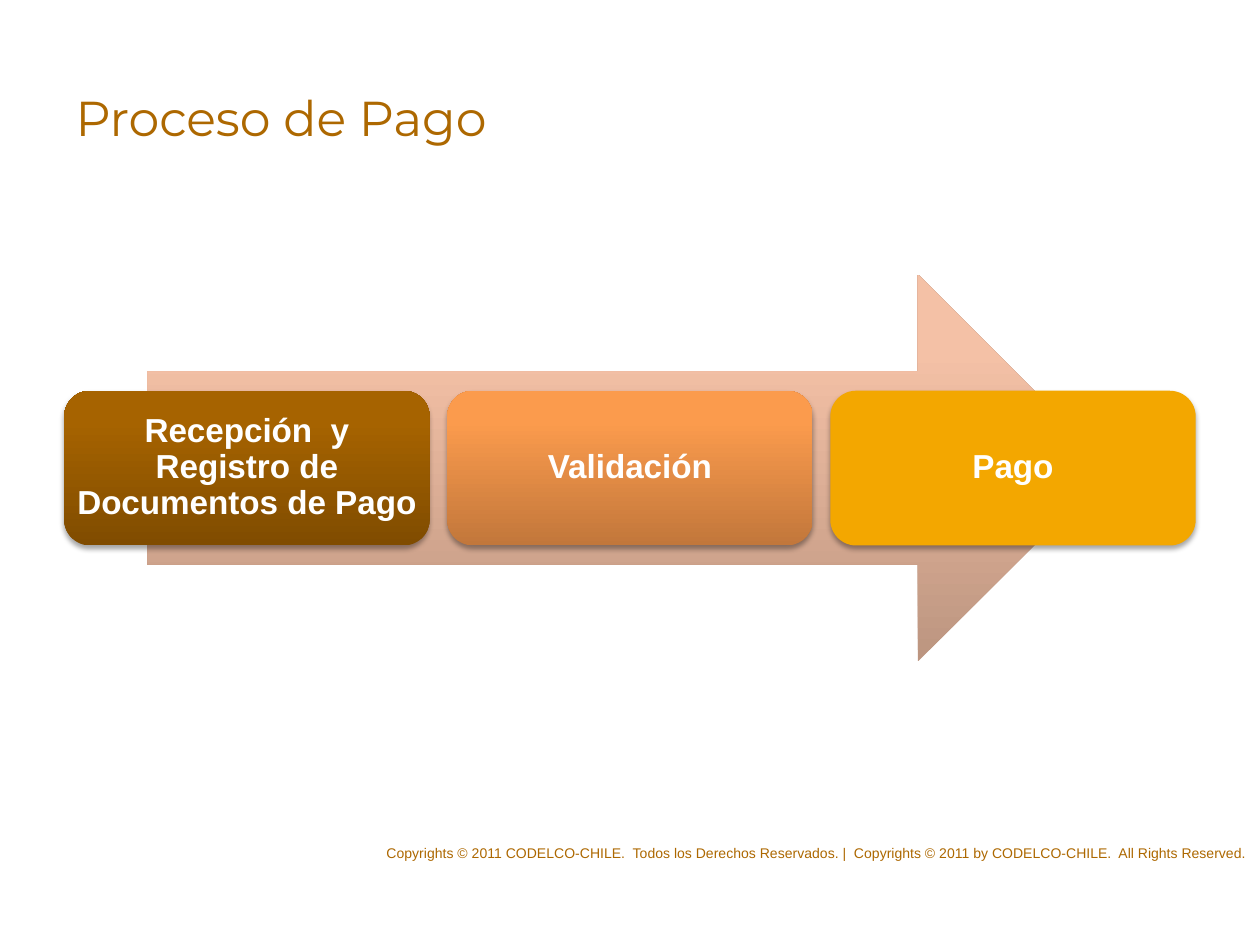
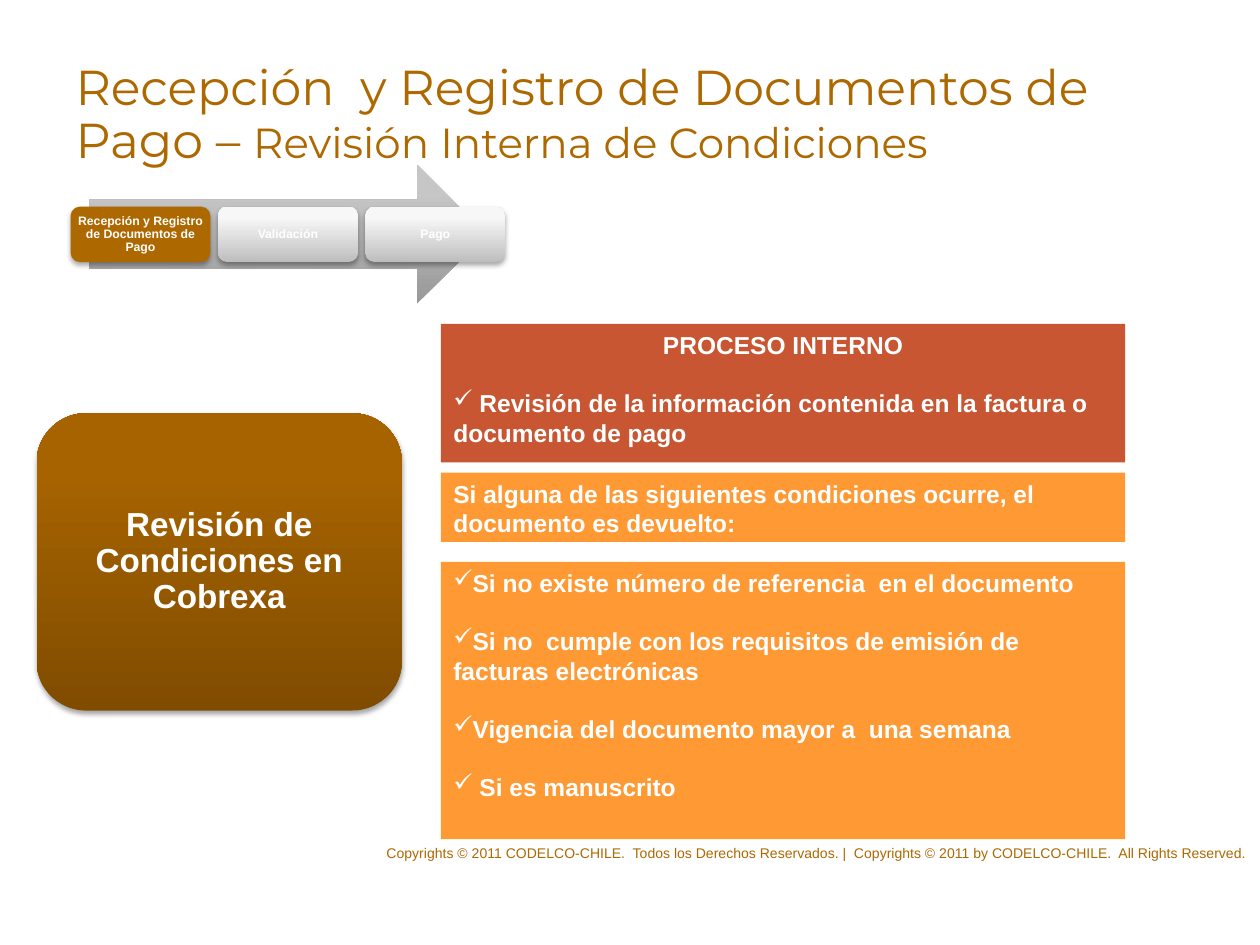
from lxml.etree import SubElement
from pptx import Presentation
from pptx.dml.color import RGBColor
from pptx.enum.shapes import MSO_SHAPE
from pptx.enum.text import MSO_ANCHOR, MSO_AUTO_SIZE, PP_ALIGN
from pptx.oxml.ns import qn
from pptx.util import Inches, Pt

BROWN, WHITE, AMBER, RUST, ORANGE = "AD6800", "FFFFFF", "F3A700", "C85632", "FF9933"
BROWN_FADE = ("804C00", "A66300")
ORANGE_FADE = ("C2773B", "FB9B4D")
PEACH_FADE = ("BC9580", "F4C1A6")
GREY_FADE = ("989898", "C6C6C6")
SILVER_FADE = ("BEBEBE", "F7F7F7")

FOOTER = ("Copyrights © 2011 CODELCO-CHILE.  Todos los Derechos Reservados. |  "
          "Copyrights © 2011 by CODELCO-CHILE.  All Rights Reserved.")

OVERVIEW = {
    "title": [("Proceso de Pago", 28)],
    "title_spacing": 1.0,
    "process": {
        "arrow": (1.17, 2.18, 7.65, 3.07), "arrow_fill": PEACH_FADE,
        "left": 0.51, "width": 2.9, "pitch": 3.04, "size": 19,
        "steps": [
            ("Recepción  y Registro de Documentos de Pago", BROWN_FADE),
            ("Validación", ORANGE_FADE),
            ("Pago", AMBER),
        ],
    },
}
REVIEW = {
    "title": [("Recepción  y Registro de Documentos de Pago – ", 28),
              ("Revisión Interna de Condiciones", 24)],
    "title_spacing": 0.9,
    "process": {
        "arrow": (0.71, 1.31, 3.15, 1.1), "arrow_fill": GREY_FADE,
        "left": 0.56, "width": 1.11, "pitch": 1.17, "size": 7,
        "steps": [
            ("Recepción y Registro de Documentos de Pago", BROWN),
            ("Validación", SILVER_FADE),
            ("Pago", SILVER_FADE),
        ],
    },
}
REVIEW_STAGE = "Revisión de Condiciones en Cobrexa"
HEADING, PLAIN, CHECK = "heading", "plain", "check"
PANELS = [
    (2.57, 1.1, RUST, [
        (HEADING, "PROCESO INTERNO"),
        (CHECK, " Revisión de la información contenida en la factura o documento de pago"),
    ]),
    (3.75, 0.55, ORANGE, [
        (PLAIN, "Si alguna de las siguientes condiciones ocurre, el documento es devuelto:"),
    ]),
    (4.46, 2.2, ORANGE, [
        (CHECK, "Si no existe número de referencia  en el documento"),
        (CHECK, "Si no  cumple con los requisitos de emisión de facturas electrónicas"),
        (CHECK, "Vigencia del documento mayor a  una semana"),
        (CHECK, " Si es manuscrito"),
    ]),
]
PANEL_LEFT, PANEL_WIDTH = 3.5, 5.43


def color(value):
    return RGBColor.from_string(value)


def set_font(font, size, shade, bold=False, name="Arial"):
    font.name, font.size, font.bold = name, Pt(size), bold
    font.color.rgb = color(shade)


def add_block(page, kind, place, fill):
    """Add a borderless shape with a solid fill or a (bottom, top) fade."""
    block = page.shapes.add_shape(kind, *map(Inches, place))
    block.shadow.inherit = False
    block.line.fill.background()
    if isinstance(fill, str):
        block.fill.solid()
        block.fill.fore_color.rgb = color(fill)
    else:
        block.fill.gradient()
        block.fill.gradient_angle = 90
        for stop, shade, position in zip(block.fill.gradient_stops, fill, (0, 0.8)):
            stop.color.rgb = color(shade)
            stop.position = position
    return block


def add_shadow(block):
    effects = block.element.spPr.find(qn("a:effectLst"))
    shadow = SubElement(effects, qn("a:outerShdw"), blurRad=str(Pt(3.1)),
                        dist=str(Pt(1.8)), dir="5400000", rotWithShape="0")
    shade = SubElement(shadow, qn("a:srgbClr"), val="000000")
    SubElement(shade, qn("a:alpha"), val="35000")


def add_stage(page, place, text, fill, size):
    stage = add_block(page, MSO_SHAPE.ROUNDED_RECTANGLE, place, fill)
    add_shadow(stage)
    frame = stage.text_frame
    frame.word_wrap = True
    frame.vertical_anchor = MSO_ANCHOR.MIDDLE
    frame.margin_left = frame.margin_right = Inches(0.02)
    frame.margin_top = frame.margin_bottom = Inches(0.02)
    para = frame.paragraphs[0]
    para.text = text
    para.alignment = PP_ALIGN.CENTER
    para.line_spacing = 0.9
    set_font(para.font, size, WHITE, bold=True)


def add_process(page, process):
    """Draw the arrow and its row of stages, centred on the arrow."""
    arrow = process["arrow"]
    add_block(page, MSO_SHAPE.RIGHT_ARROW, arrow, process["arrow_fill"])
    height = 0.4 * arrow[3]
    top = arrow[1] + (arrow[3] - height) / 2
    for index, (text, fill) in enumerate(process["steps"]):
        left = process["left"] + index * process["pitch"]
        add_stage(page, (left, top, process["width"], height), text, fill, process["size"])


def add_panel(page, top, height, fill, lines):
    panel = add_block(page, MSO_SHAPE.RECTANGLE, (PANEL_LEFT, top, PANEL_WIDTH, height), fill)
    frame = panel.text_frame
    frame.word_wrap = True
    frame.vertical_anchor = MSO_ANCHOR.TOP
    for index, (role, text) in enumerate(lines):
        para = frame.add_paragraph() if index else frame.paragraphs[0]
        para.text = text
        para.alignment = PP_ALIGN.CENTER if role == HEADING else PP_ALIGN.LEFT
        if index:
            para.space_before = Pt(16.5)
        if role == CHECK:
            SubElement(para._p.get_or_add_pPr(), qn("a:buChar"), char="✓")
        set_font(para.font, 14, WHITE, bold=True)


def add_footer(page):
    box = page.shapes.add_textbox(*map(Inches, (2.27, 6.65, 7.73, 0.24)))
    frame = box.text_frame
    frame.word_wrap = True
    frame.vertical_anchor = MSO_ANCHOR.MIDDLE
    para = frame.paragraphs[0]
    para.text = FOOTER
    para.alignment = PP_ALIGN.RIGHT
    set_font(para.font, 8, BROWN)


def add_page(deck, content):
    """Add a page with its footer, title and process arrow."""
    page = deck.slides.add_slide(deck.slide_layouts[5])
    add_footer(page)
    title = page.shapes.title
    title.left, title.top, title.width, title.height = map(Inches, (0.5, 0.3, 9, 1.25))
    frame = title.text_frame
    frame.word_wrap = True
    frame.auto_size = MSO_AUTO_SIZE.NONE
    frame.vertical_anchor = MSO_ANCHOR.MIDDLE
    para = frame.paragraphs[0]
    para.alignment = PP_ALIGN.LEFT
    para.line_spacing = content["title_spacing"]
    for text, size in content["title"]:
        span = para.add_run()
        span.text = text
        set_font(span.font, size, BROWN, name="Montserrat")
    add_process(page, content["process"])
    return page


def main():
    deck = Presentation()
    deck.slide_width, deck.slide_height = Inches(10), Inches(7.5)
    add_page(deck, OVERVIEW)
    review = add_page(deck, REVIEW)
    add_stage(review, (0.29, 3.28, 2.9, 2.36), REVIEW_STAGE, BROWN_FADE, 19)
    for panel in PANELS:
        add_panel(review, *panel)
    deck.save("out.pptx")


if __name__ == "__main__":
    main()
